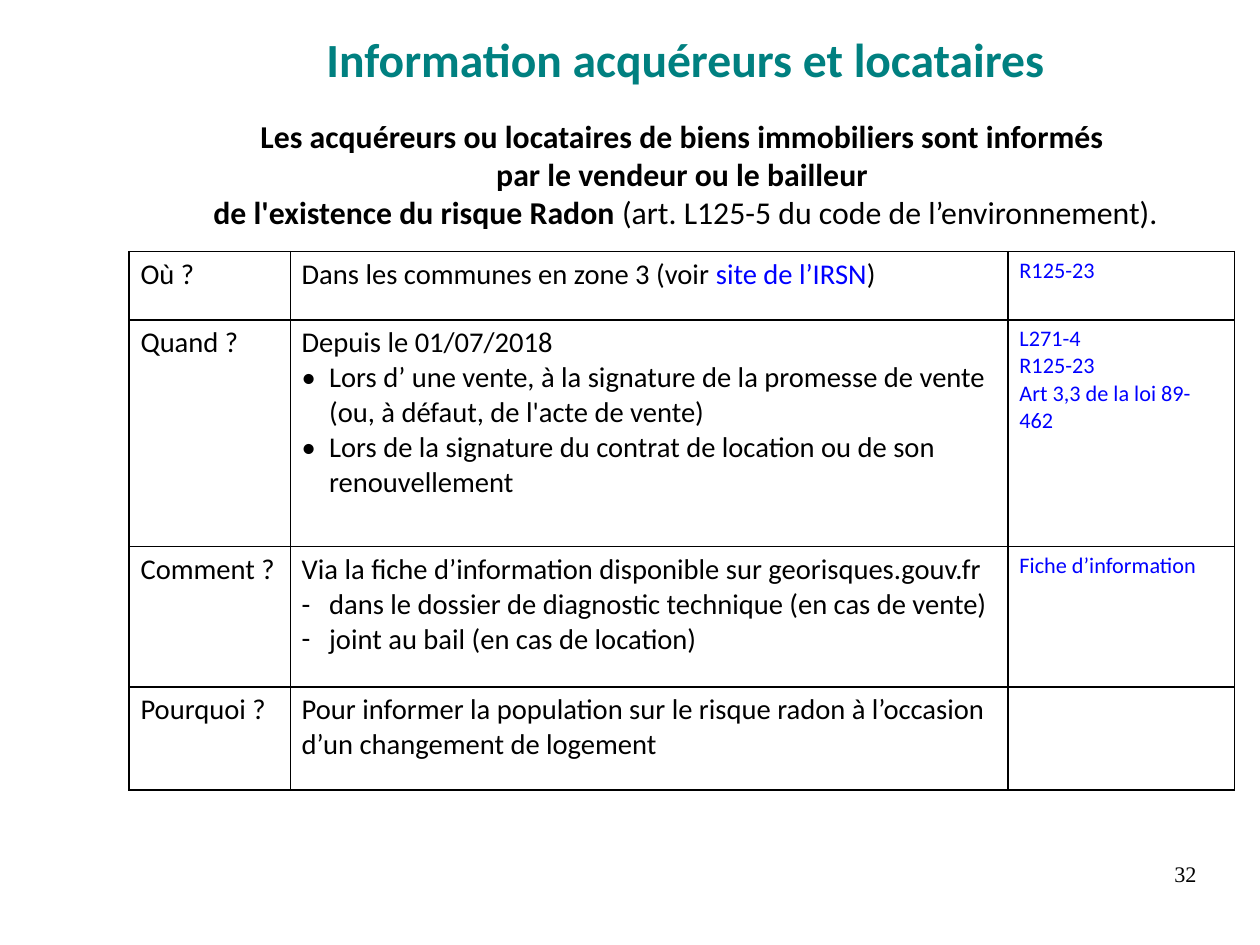
from pptx import Presentation
from pptx.dml.color import RGBColor
from pptx.enum.text import MSO_ANCHOR, MSO_AUTO_SIZE, PP_ALIGN
from pptx.oxml import parse_xml
from pptx.oxml.ns import nsdecls
from pptx.util import Inches, Pt

TEAL = RGBColor(0x00, 0x80, 0x80)
BLACK = RGBColor(0x00, 0x00, 0x00)
BLUE = RGBColor(0x00, 0x00, 0xFF)
CENTER, RIGHT = PP_ALIGN.CENTER, PP_ALIGN.RIGHT
MIDDLE, TOP = MSO_ANCHOR.MIDDLE, MSO_ANCHOR.TOP
NO_AUTOFIT = MSO_AUTO_SIZE.NONE
TITLE_ONLY = 5

COLUMN_WIDTHS = [1.41, 6.28, 1.98]
ROW_HEIGHTS = [0.6, 1.98, 1.23, 0.9]
# Each row: question, (bullet, spans) of the answer, references
ROWS = [
    ("Où ?",
     [(None, [("Dans les communes en zone 3 (voir ", BLACK),
              ("site de l’IRSN", BLUE), (")", BLACK)])],
     ["R125-23"]),
    ("Quand ?",
     [(None, [("Depuis le 01/07/2018", BLACK)]),
      ("•", [("Lors d’ une vente, à la signature de la promesse de vente "
              "(ou, à défaut, de l'acte de vente)", BLACK)]),
      ("•", [("Lors de la signature du contrat de location ou de son "
              "renouvellement", BLACK)])],
     ["L271-4", "R125-23", "Art 3,3 de la loi 89-462"]),
    ("Comment ?",
     [(None, [("Via la fiche d’information disponible sur "
               "georisques.gouv.fr", BLACK)]),
      ("-", [("dans le dossier de diagnostic technique (en cas de vente)", BLACK)]),
      ("-", [("joint au bail (en cas de location)", BLACK)])],
     ["Fiche d’information"]),
    ("Pourquoi ?",
     [(None, [("Pour informer la population sur le risque radon à l’occasion "
               "d’un changement de logement", BLACK)])],
     []),
]


def add_span(para, text, size=18, font="Calibri", color=BLACK, bold=False):
    span = para.add_run()
    span.text = text
    span.font.size = Pt(size)
    span.font.name = font
    span.font.color.rgb = color
    span.font.bold = bold


def next_para(frame, index):
    return frame.paragraphs[0] if index == 0 else frame.add_paragraph()


def set_bullet(para, mark):
    properties = para._p.get_or_add_pPr()
    properties.set("marL", str(Inches(0.24)))
    properties.set("indent", str(-Inches(0.24)))
    properties.append(parse_xml(
        f'<a:buClr {nsdecls("a")}><a:srgbClr val="{BLACK}"/></a:buClr>'))
    properties.append(parse_xml(f'<a:buFont {nsdecls("a")} typeface="Calibri"/>'))
    properties.append(parse_xml(f'<a:buChar {nsdecls("a")} char="{mark}"/>'))


def set_borders(cell):
    properties = cell._tc.get_or_add_tcPr()
    for index, side in enumerate(("lnL", "lnR", "lnT", "lnB")):
        properties.insert(index, parse_xml(
            f'<a:{side} {nsdecls("a")} w="{Pt(1)}"><a:solidFill>'
            f'<a:srgbClr val="{BLACK}"/></a:solidFill></a:{side}>'))


def prepare_frame(box, anchor, inset_x=0, inset_y=0):
    frame = box.text_frame
    frame.word_wrap = True
    frame.auto_size = NO_AUTOFIT
    frame.vertical_anchor = anchor
    frame.margin_left = frame.margin_right = Inches(inset_x)
    frame.margin_top = frame.margin_bottom = Inches(inset_y)
    return frame


def add_title(page, left, top, width, height):
    title = page.shapes.title
    title.left, title.top = Inches(left), Inches(top)
    title.width, title.height = Inches(width), Inches(height)
    para = prepare_frame(title, MIDDLE).paragraphs[0]
    para.alignment = CENTER
    add_span(para, "Information acquéreurs et locataires",
             size=30, color=TEAL, bold=True)


def add_statement(page, left, top, width, height):
    box = page.shapes.add_textbox(
        Inches(left), Inches(top), Inches(width), Inches(height))
    frame = prepare_frame(box, TOP, 0.1, 0.05)
    frame.word_wrap = False
    lines = ["Les acquéreurs ou locataires de biens immobiliers sont informés ",
             "par le vendeur ou le bailleur ",
             "de l'existence du risque Radon "]
    for index, line in enumerate(lines):
        para = next_para(frame, index)
        para.alignment = CENTER
        add_span(para, line, size=20, bold=True)
    add_span(para, "(art. L125-5 du code de l’environnement).", size=20)


def add_questions(page, left, top):
    table = page.shapes.add_table(
        len(ROW_HEIGHTS), len(COLUMN_WIDTHS), Inches(left), Inches(top),
        Inches(sum(COLUMN_WIDTHS)), Inches(sum(ROW_HEIGHTS))).table
    table.first_row = table.horz_banding = False
    for column, width in zip(table.columns, COLUMN_WIDTHS):
        column.width = Inches(width)
    for row, height, (question, answer, references) in zip(
            table.rows, ROW_HEIGHTS, ROWS):
        row.height = Inches(height)
        for cell in row.cells:
            cell.fill.background()
            set_borders(cell)
        question_cell, answer_cell, reference_cell = row.cells
        add_span(question_cell.text_frame.paragraphs[0], question)
        for index, (mark, spans) in enumerate(answer):
            para = next_para(answer_cell.text_frame, index)
            if mark:
                set_bullet(para, mark)
            for text, color in spans:
                add_span(para, text, color=color)
        for index, reference in enumerate(references):
            para = next_para(reference_cell.text_frame, index)
            add_span(para, reference, size=14, color=BLUE)


def add_page_number(page, left, top, width, height):
    box = page.shapes.add_textbox(
        Inches(left), Inches(top), Inches(width), Inches(height))
    para = prepare_frame(box, TOP).paragraphs[0]
    para.alignment = RIGHT
    add_span(para, "32", size=14, font="Times New Roman")


def main():
    deck = Presentation()
    deck.slide_width, deck.slide_height = Pt(793.75), Pt(595.25)
    page = deck.slides.add_slide(deck.slide_layouts[TITLE_ONLY])
    add_page_number(page, 7.9, 7.53, 2.57, 0.57)
    add_title(page, 1.18, -0.18, 9.64, 1.38)
    add_questions(page, 1.13, 2.2)
    add_statement(page, 1.18, 0.97, 9.64, 1.32)
    deck.save("out.pptx")


if __name__ == "__main__":
    main()
